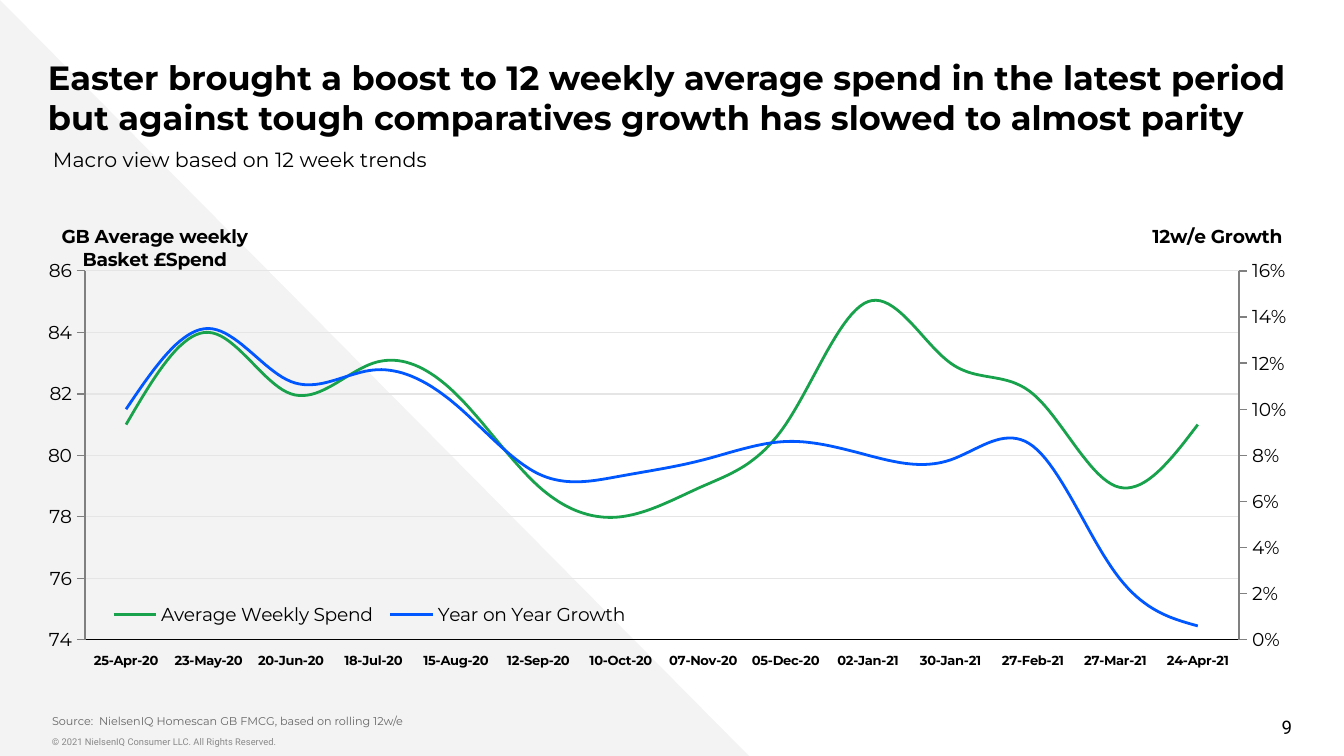
from copy import deepcopy

from lxml import etree
from pptx import Presentation
from pptx.chart.axis import ValueAxis
from pptx.chart.data import CategoryChartData
from pptx.dml.color import RGBColor
from pptx.enum.chart import XL_CHART_TYPE as ChartType
from pptx.enum.chart import XL_LEGEND_POSITION as LegendPos
from pptx.enum.chart import XL_TICK_LABEL_POSITION as LabelPos
from pptx.enum.chart import XL_TICK_MARK as Tick
from pptx.enum.shapes import MSO_SHAPE as Shape
from pptx.enum.text import MSO_ANCHOR as Anchor
from pptx.enum.text import MSO_AUTO_SIZE as AutoSize
from pptx.enum.text import PP_ALIGN as Align
from pptx.oxml.ns import qn
from pptx.util import Pt

COLORS = {"black": "000000", "wedge": "F3F3F3", "source": "666666", "copyright": "888888",
          "axis": "808080", "grid": "E5E5E5", "spend": "17A24B", "growth": "0056FF"}
DATES = ["25-Apr-20", "23-May-20", "20-Jun-20", "18-Jul-20", "15-Aug-20", "12-Sep-20", "10-Oct-20",
         "07-Nov-20", "05-Dec-20", "02-Jan-21", "30-Jan-21", "27-Feb-21", "27-Mar-21", "24-Apr-21"]
SPEND = [81, 84, 82, 83, 82, 79, 78, 79, 81, 85, 83, 82, 79, 81]
GROWTH = [0.1, 0.135, 0.112, 0.117, 0.102, 0.072, 0.071,
          0.078, 0.086, 0.08, 0.078, 0.084, 0.029, 0.006]


def px(n):
    return round(n * 914400 / 134.4)


def rgb(name):
    return RGBColor.from_string(COLORS[name])


def set_font(font, size, color="black", name="Montserrat", bold=False):
    for key, value in {"size": Pt(size), "name": name, "bold": bold}.items():
        setattr(font, key, value)
    font.color.rgb = rgb(color)


def set_line(line, color, width=0.75):
    line.color.rgb = rgb(color)
    line.width = Pt(width)


def fill_text(sp, box, text, pad, anchor=Anchor.TOP, align=Align.LEFT, **font):
    sp.left, sp.top, sp.width, sp.height = map(px, box)
    tf = sp.text_frame
    frame = {"word_wrap": True, "auto_size": AutoSize.NONE, "vertical_anchor": anchor,
             "margin_left": px(pad[0]), "margin_right": px(pad[0]),
             "margin_top": px(pad[1]), "margin_bottom": px(pad[1])}
    for key, value in frame.items():
        setattr(tf, key, value)
    p = tf.paragraphs[0]
    p.alignment = align
    p.space_before = Pt(0)
    r = p.add_run()
    r.text = text
    set_font(r.font, **font)


def add_text(s, box, *args, **kwargs):
    fill_text(s.shapes.add_textbox(*map(px, box)), box, *args, **kwargs)


def add_backdrop(s, box):
    sp = s.shapes.add_shape(Shape.RIGHT_TRIANGLE, *map(px, box))
    sp.shadow.inherit = False
    sp.fill.solid()
    sp.fill.fore_color.rgb = rgb("wedge")
    sp.line.fill.background()
    s.shapes.title._element.addprevious(sp._element)


def add_heading(s, box):
    x, y, w, h = box
    fill_text(s.shapes.title, box,
              "Easter brought a boost to 12 weekly average spend in the latest period "
              "but against tough comparatives growth has slowed to almost parity",
              (0, 13), size=18, bold=True)
    add_text(s, (x - 8, y + h - 7, 672, 39), "Macro view based on 12 week trends", (13, 13), size=11)


def add_footer(s, box):
    x, y, w, h = box
    fill_text(s.placeholders[1], (x, y, w, 27),
              "Source:  NielsenIQ Homescan GB FMCG, based on rolling 12w/e",
              (0, 13), anchor=Anchor.BOTTOM, size=6, color="source")
    add_text(s, (x, y + 15, 745, 27), "© 2021 NielsenIQ Consumer LLC. All Rights Reserved.",
             (0, 7), size=5, color="copyright", name="Roboto")
    add_text(s, (x + w - 302, y - 7, 302, 40), "9", (0, 7), anchor=Anchor.MIDDLE,
             align=Align.RIGHT, size=10, name="Roboto")


def set_layout(parent, after, box, x, y, w=None, h=None, inner=False):
    for old in parent.findall(qn("c:layout")):
        parent.remove(old)
    layout = etree.Element(qn("c:layout"))
    manual = etree.SubElement(layout, qn("c:manualLayout"))
    values = {"layoutTarget": "inner"} if inner else {}
    values.update(xMode="edge", yMode="edge", x=x / box[2], y=y / box[3])
    if w:
        values.update(w=w / box[2], h=h / box[3])
    for tag, value in values.items():
        text = value if isinstance(value, str) else f"{value:.3f}"
        etree.SubElement(manual, qn(f"c:{tag}")).set("val", text)
    if after:
        parent.find(qn(after)).addnext(layout)
    else:
        parent.insert(0, layout)


def style_value_axis(axis, low, high, step, fmt, lines, box, x, y):
    scale = {"minimum_scale": low, "maximum_scale": high, "major_unit": step,
             "major_tick_mark": Tick.OUTSIDE, "minor_tick_mark": Tick.NONE}
    for key, value in scale.items():
        setattr(axis, key, value)
    labels = axis.tick_labels
    labels.number_format, labels.number_format_is_linked = fmt, False
    set_font(labels.font, 10)
    set_line(axis.format.line, "axis")
    title = axis.axis_title
    tf = title.text_frame
    for i, text in enumerate(lines):
        p = tf.add_paragraph() if i else tf.paragraphs[0]
        r = p.add_run()
        r.text = text
        set_font(r.font, 10, bold=True)
    body = title._element.find(".//" + qn("a:bodyPr"))
    body.set("rot", "0")
    body.set("vert", "horz")
    set_layout(title._element, "c:tx", box, x, y)


def add_growth_axis(chart):
    plot = chart._chartSpace.chart.plotArea
    first = plot.find(qn("c:lineChart"))
    second = deepcopy(first)
    first.remove(first.findall(qn("c:ser"))[1])
    second.remove(second.findall(qn("c:ser"))[0])
    first.addnext(second)
    cat = deepcopy(plot.find(qn("c:catAx")))
    val = deepcopy(plot.find(qn("c:valAx")))
    plot.find(qn("c:valAx")).addnext(val)
    val.addnext(cat)
    for part, ids in ((cat, ("50010", "50020")), (val, ("50020", "50010"))):
        part.find(qn("c:axId")).set("val", ids[0])
        part.find(qn("c:crossAx")).set("val", ids[1])
    for node, number in zip(second.findall(qn("c:axId")), ("50010", "50020")):
        node.set("val", number)
    cat.find(qn("c:delete")).set("val", "1")
    val.find(qn("c:axPos")).set("val", "r")
    val.find(qn("c:crosses")).set("val", "max")
    return ValueAxis(val)


def add_trend_chart(s, box):
    data = CategoryChartData()
    data.categories = DATES
    data.add_series("Average Weekly Spend", SPEND, "0")
    data.add_series("Year on Year Growth", GROWTH, "0%")
    chart = s.shapes.add_chart(ChartType.LINE, *map(px, box), data).chart
    chart.has_title = False
    set_font(chart.font, 10)
    plot = chart.plots[0]
    plot.vary_by_categories = False
    for series, color in zip(plot.series, ("spend", "growth")):
        series.smooth = True
        set_line(series.format.line, color, 1.5)

    cat = chart.category_axis
    cat.major_tick_mark = cat.minor_tick_mark = Tick.NONE
    cat.tick_label_position = LabelPos.LOW
    set_font(cat.tick_labels.font, 7, bold=True)
    set_line(cat.format.line, "black")

    spend = chart.value_axis
    spend.has_major_gridlines = False
    growth = add_growth_axis(chart)
    spend.has_major_gridlines = True
    set_line(spend.major_gridlines.format.line, "grid")
    style_value_axis(spend, 74, 86, 2, "0", ["GB Average weekly", "Basket £Spend"], box, 7, 16)
    style_value_axis(growth, 0, 0.16, 0.02, "0%", ["12w/e Growth"], box, 1102, 17)

    chart.has_legend = True
    legend = chart.legend
    legend.position = LegendPos.BOTTOM
    legend.include_in_layout = False
    set_font(legend.font, 10)
    set_layout(legend._element, "c:legendPos", box, 52, 398, 536, 28)
    set_layout(chart._chartSpace.chart.plotArea, None, box, 35, 68, 1158, 369, inner=True)


def main():
    prs = Presentation()
    prs.slide_width, prs.slide_height = px(1344), px(756)
    s = prs.slides.add_slide(prs.slide_layouts[0])
    add_backdrop(s, (0, 0, 751, 758))
    add_heading(s, (48, 44, 1296, 97))
    add_trend_chart(s, (48, 203, 1238, 496))
    add_footer(s, (52, 714, 1240, 42))
    prs.save("out.pptx")


if __name__ == "__main__":
    main()
